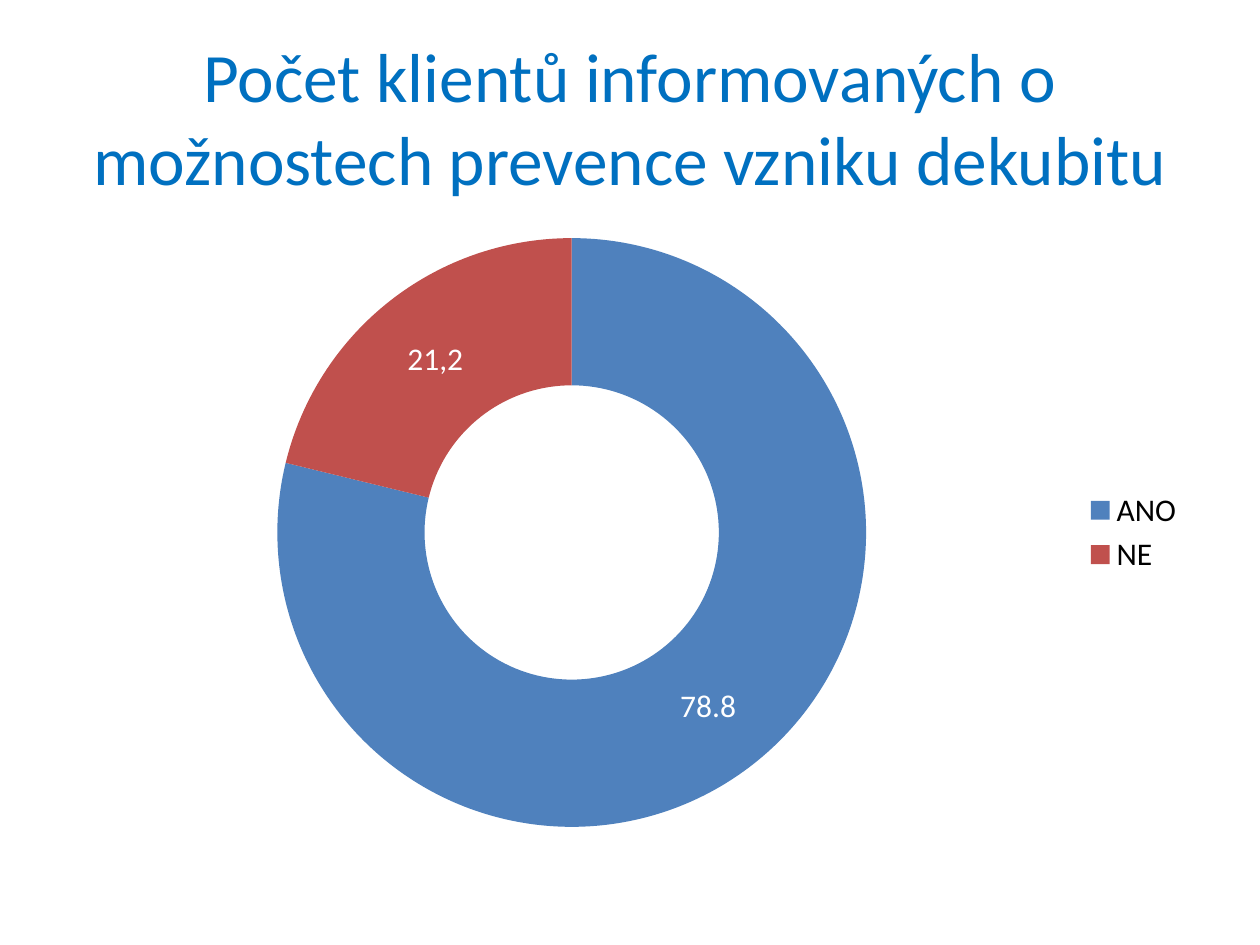
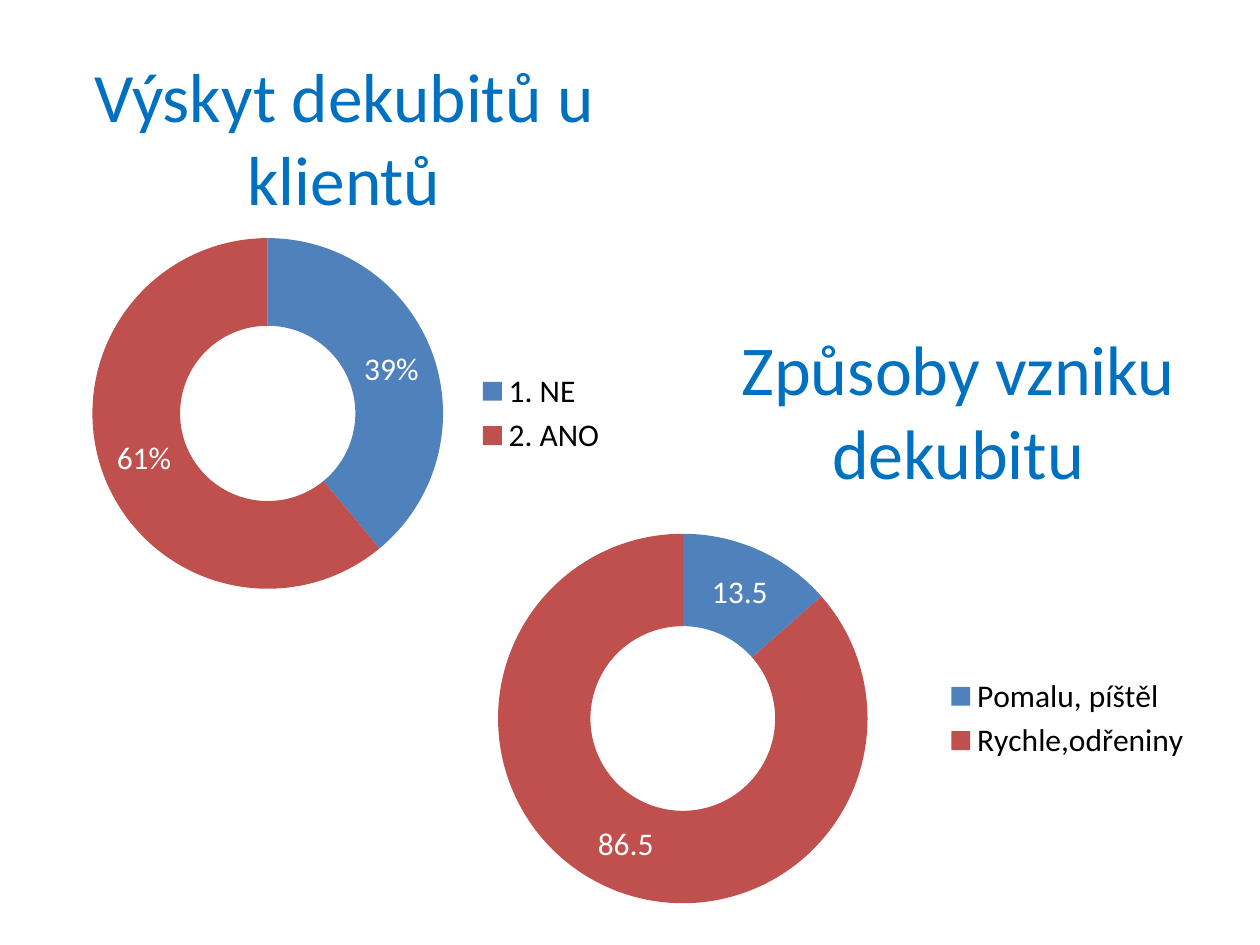
from dataclasses import dataclass

from pptx import Presentation
from pptx.chart.data import CategoryChartData
from pptx.dml.color import RGBColor
from pptx.enum.chart import XL_CHART_TYPE, XL_LEGEND_POSITION
from pptx.enum.text import MSO_ANCHOR, PP_ALIGN
from pptx.util import Cm, Pt

DOUGHNUT = XL_CHART_TYPE.DOUGHNUT
RIGHT = XL_LEGEND_POSITION.RIGHT
CENTER = PP_ALIGN.CENTER
MIDDLE, TOP = MSO_ANCHOR.MIDDLE, MSO_ANCHOR.TOP


@dataclass(frozen=True)
class Theme:
    font: str = "Calibri"
    title: RGBColor = RGBColor(0x00, 0x70, 0xC0)
    text: RGBColor = RGBColor(0x00, 0x00, 0x00)
    label: RGBColor = RGBColor(0xFF, 0xFF, 0xFF)
    points: tuple = (RGBColor(0x4F, 0x81, 0xBD), RGBColor(0xC0, 0x50, 0x4D))
    title_size: float = 39.6
    heading_size: float = 40
    chart_size: float = 18


class Deck:
    def __init__(self, theme):
        self.theme = theme
        self.prs = Presentation()
        self.prs.slide_width, self.prs.slide_height = Cm(25.4), Cm(19.05)
        self.s = None

    def slide(self):
        self.s = self.prs.slides.add_slide(self.prs.slide_layouts[6])

    def style(self, font, size, color):
        for name, value in {"name": self.theme.font, "size": Pt(size)}.items():
            setattr(font, name, value)
        font.color.rgb = color

    def title(self, text, box, size, anchor=MIDDLE):
        tf = self.s.shapes.add_textbox(*map(Cm, box)).text_frame
        for name, value in {"word_wrap": True, "vertical_anchor": anchor}.items():
            setattr(tf, name, value)
        p = tf.paragraphs[0]
        p.alignment = CENTER
        r = p.add_run()
        r.text = text
        self.style(r.font, size, self.theme.title)

    def doughnut(self, values, box, percent=False, custom=None):
        t = self.theme
        data = CategoryChartData()
        data.categories = list(values)
        data.add_series("Series 1", list(values.values()))
        chart = self.s.shapes.add_chart(DOUGHNUT, *map(Cm, box), data).chart
        self.style(chart.font, t.chart_size, t.text)
        chart.has_title = False
        chart.has_legend = True
        for name, value in {"position": RIGHT, "include_in_layout": False}.items():
            setattr(chart.legend, name, value)

        plot = chart.plots[0]
        plot.vary_by_categories = True
        series = plot.series[0]
        labels = series.data_labels
        formats = {
            "show_value": not percent,
            "show_percentage": percent,
            "number_format": "0%" if percent else "General",
            "number_format_is_linked": False,
        }
        for name, value in formats.items():
            setattr(labels, name, value)
        self.style(labels.font, t.chart_size, t.label)

        for i, color in enumerate(t.points):
            fill = series.points[i].format.fill
            fill.solid()
            fill.fore_color.rgb = color
        for i, text in (custom or {}).items():
            r = series.points[i].data_label.text_frame.paragraphs[0].add_run()
            r.text = text
            self.style(r.font, t.chart_size, t.label)


def main():
    theme = Theme()
    deck = Deck(theme)

    deck.slide()
    deck.title("Počet klientů informovaných o možnostech prevence vzniku dekubitu",
               (1.27, 0.76, 22.86, 3.18), theme.title_size)
    deck.doughnut({"ANO": 78.8, "NE": 21.2}, (1.27, 4.45, 22.86, 12.57),
                  custom={1: "21,2"})

    deck.slide()
    deck.title("Výskyt dekubitů u klientů", (1.27, 0.76, 11.33, 3.99),
               theme.title_size)
    deck.doughnut({"1. NE": 39, "2. ANO": 61}, (1.27, 4.45, 11.23, 7.77),
                  percent=True)
    deck.doughnut({"Pomalu, píštěl": 13.5, "Rychle,odřeniny": 86.5},
                  (8.56, 10.41, 15.72, 8.15))
    deck.title("Způsoby vzniku dekubitu", (14.22, 6.43, 10.19, 3.68),
               theme.heading_size, TOP)

    deck.prs.save("out.pptx")


if __name__ == "__main__":
    main()
